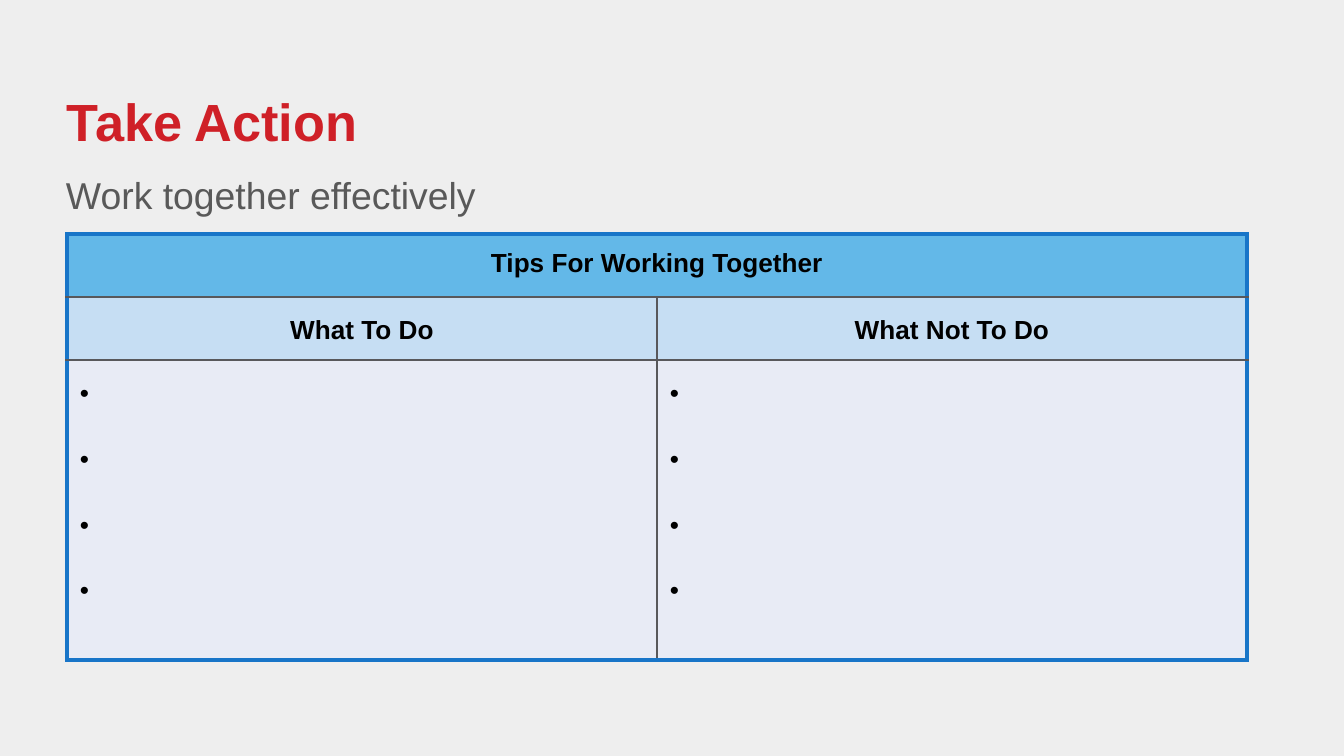
"""Build the Take Action slide with its table of tips."""
from dataclasses import dataclass

from lxml import etree
from pptx import Presentation
from pptx.dml.color import RGBColor
from pptx.enum.text import MSO_ANCHOR, PP_ALIGN
from pptx.oxml.ns import qn
from pptx.util import Pt

CENTER = PP_ALIGN.CENTER
LEFT = PP_ALIGN.LEFT
TOP = MSO_ANCHOR.TOP
BOTTOM = MSO_ANCHOR.BOTTOM
EMU_PER_PX = 914400 / 134.4


@dataclass(frozen=True)
class Theme:
    """Colours, font and type sizes."""
    font: str = "Arial"
    background: str = "EEEEEE"
    title: str = "CF2027"
    subtitle: str = "595959"
    text: str = "000000"
    banner: str = "63B8E8"
    heading: str = "C6DEF3"
    body: str = "E8EBF5"
    frame: str = "1875C8"
    rule: str = "58585B"
    title_size: int = 28
    subtitle_size: int = 20
    table_size: int = 14
    frame_width: float = 2.25
    rule_width: float = 1


THEME = Theme()


def px(n):
    """Turn px into EMU."""
    return round(n * EMU_PER_PX)


def add_run(p, text, size, color, bold=False):
    """Add a formatted run to a paragraph."""
    r = p.add_run()
    r.text = text
    r.font.name = THEME.font
    r.font.size = Pt(size)
    r.font.bold = bold
    r.font.color.rgb = RGBColor.from_string(color)


def set_frame(s, box, insets, anchor):
    """Place a text shape and return its text frame."""
    s.left, s.top, s.width, s.height = map(px, box)
    tf = s.text_frame
    tf.word_wrap = True
    tf.vertical_anchor = anchor
    tf.margin_left = tf.margin_right = 0
    tf.margin_top, tf.margin_bottom = map(px, insets)
    return tf


def add_title(slide, text):
    """Fill and format the title placeholder."""
    tf = set_frame(slide.shapes.title, (67, 97, 1142, 56), (0, 0), BOTTOM)
    p = tf.paragraphs[0]
    p.alignment = LEFT
    p.line_spacing = 0.9
    add_run(p, text, THEME.title_size, THEME.title, True)


def add_subtitle(slide, text):
    """Add the line under the title."""
    box = (66, 157, 832, 59)
    s = slide.shapes.add_textbox(*map(px, box))
    p = set_frame(s, box, (11, 3), TOP).paragraphs[0]
    p.line_spacing = 1.1
    add_run(p, text, THEME.subtitle_size, THEME.subtitle)


def set_border(cell, side, outer):
    """Draw one cell edge as outer frame or inner rule."""
    width = THEME.frame_width if outer else THEME.rule_width
    ln = etree.SubElement(cell._tc.get_or_add_tcPr(), qn(f"a:ln{side}"), w=str(Pt(width)))
    fill = etree.SubElement(ln, qn("a:solidFill"))
    etree.SubElement(fill, qn("a:srgbClr"), val=THEME.frame if outer else THEME.rule)


def style_cell(cell, color, edges, top_inset):
    """Set the borders, fill and insets of a cell."""
    for side, outer in edges.items():
        set_border(cell, side, outer)
    cell.fill.solid()
    cell.fill.fore_color.rgb = RGBColor.from_string(color)
    cell.vertical_anchor = TOP
    cell.margin_left = cell.margin_right = px(13)
    cell.margin_top = px(top_inset)
    cell.margin_bottom = px(5)


def add_heading(cell, text, spacing):
    """Write a centred bold heading in a cell."""
    p = cell.text_frame.paragraphs[0]
    p.alignment = CENTER
    p.line_spacing = spacing
    add_run(p, text, THEME.table_size, THEME.text, True)


def add_bullets(cell, count):
    """Add bulleted lines left open for writing."""
    tf = cell.text_frame
    for i in range(count):
        p = tf.add_paragraph() if i else tf.paragraphs[0]
        pPr = p._p.get_or_add_pPr()
        pPr.set("marL", str(px(38)))
        pPr.set("indent", str(-px(38)))
        etree.SubElement(pPr, qn("a:buFont"), typeface=THEME.font)
        etree.SubElement(pPr, qn("a:buChar"), char="•")
        if i:
            p.space_before = Pt(19.5)
        add_run(p, " ", THEME.table_size, THEME.text)


def add_tips_table(slide, banner, headings, bullet_count):
    """Add the table with banner, headings and bulleted cells."""
    heights = (63, 63, 300)
    fills = (THEME.banner, THEME.heading, THEME.body)
    insets = (15, 15, 19)
    rows, cols = len(heights), len(headings)
    frame = slide.shapes.add_table(rows, cols, px(67), px(234), px(1180), px(sum(heights)))
    table = frame.table
    table.first_row = table.horz_banding = False
    for row, height in zip(table.rows, heights):
        row.height = px(height)
    table.cell(0, 0).merge(table.cell(0, cols - 1))
    for r in range(rows):
        for c in range(cols):
            cell = table.cell(r, c)
            span = cols if cell.is_merge_origin else 1
            edges = {"L": c == 0 or cell.is_spanned, "R": c + span == cols,
                     "T": r == 0, "B": r == rows - 1}
            style_cell(cell, fills[r], edges, insets[r])
    add_heading(table.cell(0, 0), banner, 1.0)
    for c, heading in enumerate(headings):
        add_heading(table.cell(1, c), heading, 1.14)
        add_bullets(table.cell(2, c), bullet_count)


def main():
    """Build and save the slide."""
    prs = Presentation()
    prs.slide_width, prs.slide_height = px(1344), px(756)
    slide = prs.slides.add_slide(prs.slide_layouts[5])
    fill = slide.background.fill
    fill.solid()
    fill.fore_color.rgb = RGBColor.from_string(THEME.background)
    add_title(slide, "Take Action")
    add_subtitle(slide, "Work together effectively")
    add_tips_table(slide, "Tips For Working Together", ("What To Do", "What Not To Do"), 4)
    prs.save("out.pptx")


if __name__ == "__main__":
    main()
